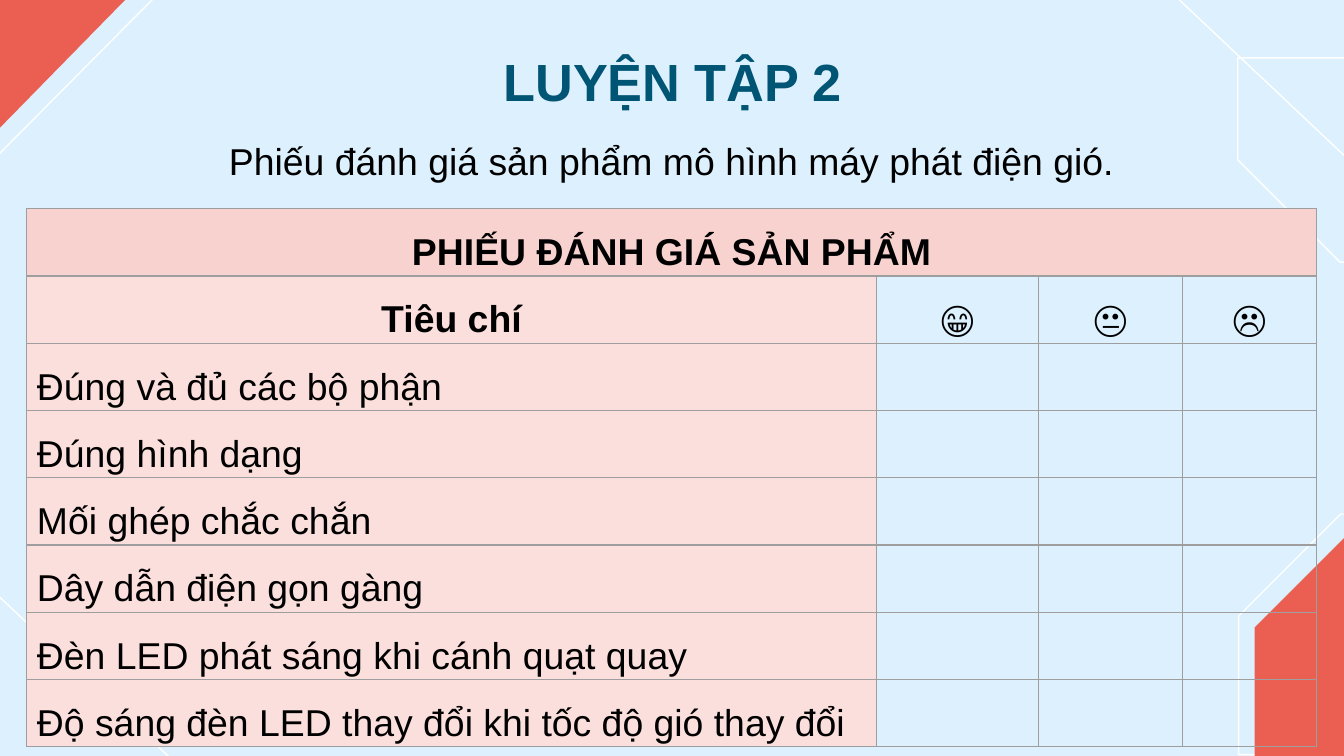
from dataclasses import dataclass
from typing import Any, Optional

from lxml.etree import SubElement
from pptx import Presentation
from pptx.dml.color import RGBColor
from pptx.enum.shapes import MSO_SHAPE as Shape
from pptx.enum.text import MSO_ANCHOR as Anchor, PP_ALIGN as Align
from pptx.oxml.ns import qn
from pptx.util import Pt

SKY = RGBColor(0xDC, 0xF0, 0xFD)
CORAL = RGBColor(0xEB, 0x5E, 0x52)
ROSE = RGBColor(0xF7, 0xD2, 0xCF)
BLUSH = RGBColor(0xFB, 0xDF, 0xDC)
TEAL = RGBColor(0x00, 0x54, 0x74)
GRAY = RGBColor(0x9E, 0x9E, 0x9E)
WHITE = RGBColor(0xFF, 0xFF, 0xFF)
BLACK = RGBColor(0, 0, 0)

BODY = {"alignment": Align.LEFT, "line_spacing": 1.5, "space_after": Pt(10)}
MID = {**BODY, "alignment": Align.CENTER}
HEAD = {"alignment": Align.CENTER}
PLAIN = {"name": "Arial", "size": Pt(20), "bold": False}
BOLD = {**PLAIN, "bold": True}
BIG = {**BOLD, "size": Pt(28)}
CELL = {
    "margin_left": Pt(5.4),
    "margin_right": Pt(5.4),
    "margin_top": 0,
    "margin_bottom": 0,
    "vertical_anchor": Anchor.MIDDLE,
}


@dataclass
class Decor:
    kind: Shape
    left: float
    top: float
    width: float
    height: float
    turn: int = 0
    fill: Optional[RGBColor] = None


@dataclass
class Label:
    text: str
    left: float
    top: float
    width: float
    height: float
    inset: float
    para: dict
    font: dict
    color: RGBColor


TRI = Shape.RIGHT_TRIANGLE
SNIP = Shape.SNIP_2_DIAG_RECTANGLE
DECOR = [
    Decor(TRI, 625.7, -5.8, 101.5, 95.8, 180),
    Decor(SNIP, 663.1, 31, 128.9, 109.4),
    Decor(TRI, -5.8, 314.6, 101.5, 95.8),
    Decor(SNIP, 653.8, 285.1, 128.9, 109.4, 270),
    Decor(SNIP, 662.4, 293, 125.3, 105.8, 270, CORAL),
    Decor(TRI, -5.8, -8.6, 96.5, 95.8, 90),
    Decor(TRI, -0.7, 0, 69.1, 67.7, 90, CORAL),
]
LABELS = [
    Label("LUYỆN TẬP 2", 56.9, 19.4, 607, 116.6, 7.2, HEAD, BIG, TEAL),
    Label("Phiếu đánh giá sản phẩm mô hình máy phát điện gió.",
          48.2, 58.3, 623.5, 38.9, 3.6, MID, PLAIN, BLACK),
]
COLS = [455, 87, 77, 72]
ROW = 36
TITLE = "PHIẾU ĐÁNH GIÁ SẢN PHẨM"
FACES = ["😁", "😐", "☹️"]
ITEMS = [
    "Đúng và đủ các bộ phận",
    "Đúng hình dạng",
    "Mối ghép chắc chắn",
    "Dây dẫn điện gọn gàng",
    "Đèn LED phát sáng khi cánh quạt quay",
    "Độ sáng đèn LED thay đổi khi tốc độ gió thay đổi",
]


def apply(target: Any, values: dict) -> None:
    for name, value in values.items():
        setattr(target, name, value)


def write(frame: Any, text: str, para: dict, font: dict,
          color: RGBColor = BLACK) -> None:
    line = frame.paragraphs[0]
    apply(line, para)
    run = line.add_run()
    run.text = text
    apply(run.font, font)
    run.font.color.rgb = color


def draw_decor(slide: Any, item: Decor) -> None:
    shape = slide.shapes.add_shape(
        item.kind, Pt(item.left), Pt(item.top), Pt(item.width), Pt(item.height))
    shape.shadow.inherit = False
    shape.rotation = item.turn
    if item.kind == SNIP:
        shape.adjustments[0] = 0
        shape.adjustments[1] = 0.5
    if item.fill:
        shape.fill.solid()
        shape.fill.fore_color.rgb = item.fill
        shape.line.fill.background()
    else:
        shape.fill.background()
        shape.line.color.rgb = WHITE
        shape.line.width = Pt(0.75)


def draw_label(slide: Any, item: Label) -> None:
    box = slide.shapes.add_textbox(
        Pt(item.left), Pt(item.top), Pt(item.width), Pt(item.height))
    frame = box.text_frame
    apply(frame, {"word_wrap": True, "margin_top": Pt(item.inset),
                  "margin_bottom": Pt(item.inset)})
    write(frame, item.text, item.para, item.font, item.color)


def style_cell(cell: Any, fill: Optional[RGBColor]) -> None:
    apply(cell, CELL)
    props = cell._tc.get_or_add_tcPr()
    for side in ("lnL", "lnR", "lnT", "lnB"):
        edge = SubElement(props, qn(f"a:{side}"), w=str(Pt(0.75)))
        paint = SubElement(edge, qn("a:solidFill"))
        SubElement(paint, qn("a:srgbClr"), val=str(GRAY))
    if fill:
        cell.fill.solid()
        cell.fill.fore_color.rgb = fill
    else:
        cell.fill.background()


def draw_table(slide: Any) -> None:
    rows = len(ITEMS) + 2
    table = slide.shapes.add_table(
        rows, len(COLS), Pt(14.4), Pt(111.8), Pt(sum(COLS)), Pt(rows * ROW)).table
    apply(table, {"first_row": False, "horz_banding": False})
    for col, width in zip(table.columns, COLS):
        col.width = Pt(width)
    for r in range(rows):
        for c in range(len(COLS)):
            fill = ROSE if r == 0 else BLUSH if c == 0 else None
            style_cell(table.cell(r, c), fill)
    table.cell(0, 0).merge(table.cell(0, len(COLS) - 1))
    write(table.cell(0, 0).text_frame, TITLE, MID, BOLD)
    write(table.cell(1, 0).text_frame, "Tiêu chí", MID, BOLD)
    for c, face in enumerate(FACES, 1):
        write(table.cell(1, c).text_frame, face, MID, PLAIN)
    for r, text in enumerate(ITEMS, 2):
        write(table.cell(r, 0).text_frame, text, BODY, PLAIN)


def main() -> None:
    deck = Presentation()
    apply(deck, {"slide_width": Pt(720), "slide_height": Pt(405)})
    slide = deck.slides.add_slide(deck.slide_layouts[6])
    slide.background.fill.solid()
    slide.background.fill.fore_color.rgb = SKY
    for item in DECOR:
        draw_decor(slide, item)
    for label in LABELS:
        draw_label(slide, label)
    draw_table(slide)
    deck.save("out.pptx")


if __name__ == "__main__":
    main()
